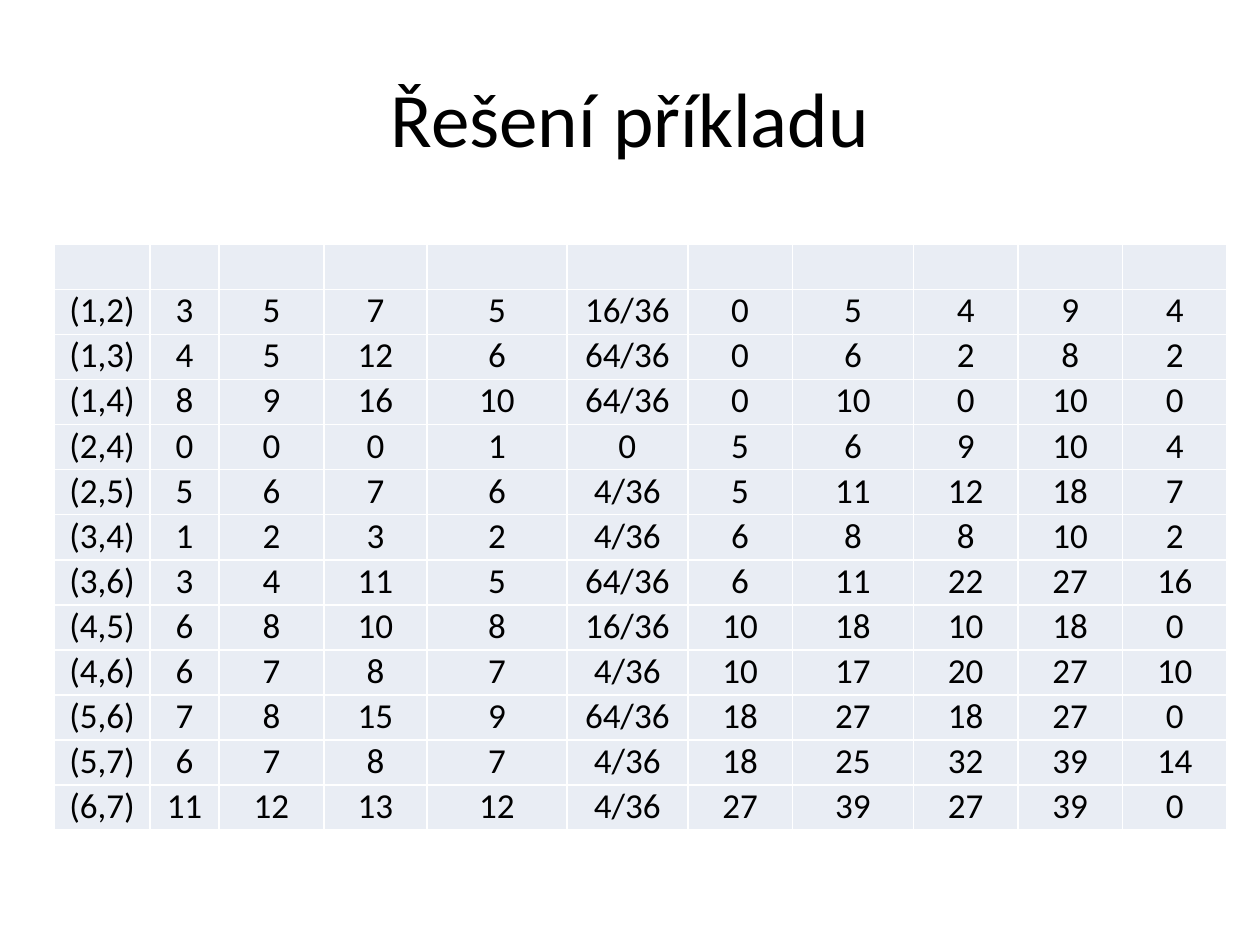
from lxml import etree
from pptx import Presentation, util as u
from pptx.dml.color import RGBColor
from pptx.enum import text as t
from pptx.oxml import ns

EDGE_ROWS = """
(1,2) 3 5 7 5 16/36 0 5 4 9 4
(1,3) 4 5 12 6 64/36 0 6 2 8 2
(1,4) 8 9 16 10 64/36 0 10 0 10 0
(2,4) 0 0 0 1 0 5 6 9 10 4
(2,5) 5 6 7 6 4/36 5 11 12 18 7
(3,4) 1 2 3 2 4/36 6 8 8 10 2
(3,6) 3 4 11 5 64/36 6 11 22 27 16
(4,5) 6 8 10 8 16/36 10 18 10 18 0
(4,6) 6 7 8 7 4/36 10 17 20 27 10
(5,6) 7 8 15 9 64/36 18 27 18 27 0
(5,7) 6 7 8 7 4/36 18 25 32 39 14
(6,7) 11 12 13 12 4/36 27 39 27 39 0
"""
COLUMN_WIDTHS = [0.76, 0.55, 0.83, 0.82, 1.11, 0.96, 0.83, 0.96, 0.83, 0.83, 0.83]


def color(value):
    return RGBColor.from_string(value)


def write(frame, content, size=20, font="Calibri", fill="000000", align=t.PP_ALIGN.CENTER):
    paragraph = frame.paragraphs[0]
    paragraph.alignment = align
    run = paragraph.add_run()
    run.text = content
    run.font.size = u.Pt(size)
    run.font.name = font
    run.font.color.rgb = color(fill)


class SlideBuilder:
    cell_fill = "E9EDF4"
    border_color = "FFFFFF"
    border_width = 1
    title_size = 44

    def __init__(self, slide):
        self.slide = slide

    def title(self, content, left, top, width, height):
        shape = self.slide.shapes.title
        shape.left, shape.top = u.Inches(left), u.Inches(top)
        shape.width, shape.height = u.Inches(width), u.Inches(height)
        shape.text_frame.vertical_anchor = t.MSO_ANCHOR.MIDDLE
        write(shape.text_frame, content, size=self.title_size)

    def border(self, cell):
        properties = cell._tc.get_or_add_tcPr()
        for side in ("lnL", "lnR", "lnT", "lnB"):
            line = etree.SubElement(properties, ns.qn(f"a:{side}"), w=str(u.Pt(self.border_width)))
            solid = etree.SubElement(line, ns.qn("a:solidFill"))
            etree.SubElement(solid, ns.qn("a:srgbClr"), val=self.border_color)

    def cell(self, cell, content):
        cell.margin_left = cell.margin_right = u.Inches(0.05)
        cell.margin_top = cell.margin_bottom = 0
        self.border(cell)
        cell.fill.solid()
        cell.fill.fore_color.rgb = color(self.cell_fill)
        if content:
            write(cell.text_frame, content)

    def table(self, rows, widths, left, top, height):
        frame = self.slide.shapes.add_table(
            len(rows), len(widths), u.Inches(left), u.Inches(top),
            u.Inches(sum(widths)), u.Inches(height))
        table = frame.table
        table.first_row = table.horz_banding = False
        for column, width in zip(table.columns, widths):
            column.width = u.Inches(width)
        for row, values in zip(table.rows, rows):
            row.height = u.Inches(height / len(rows))
            for cell, value in zip(row.cells, values):
                self.cell(cell, value)


def main():
    presentation = Presentation()
    presentation.slide_width = u.Inches(10)
    presentation.slide_height = u.Inches(7.5)
    builder = SlideBuilder(presentation.slides.add_slide(presentation.slide_layouts[5]))
    builder.title("Řešení příkladu", 0.5, 0.3, 9, 1.25)
    header = [""] * len(COLUMN_WIDTHS)
    rows = [header] + [line.split() for line in EDGE_ROWS.strip().splitlines()]
    builder.table(rows, COLUMN_WIDTHS, 0.43, 1.94, 4.65)
    presentation.save("out.pptx")


if __name__ == "__main__":
    main()
